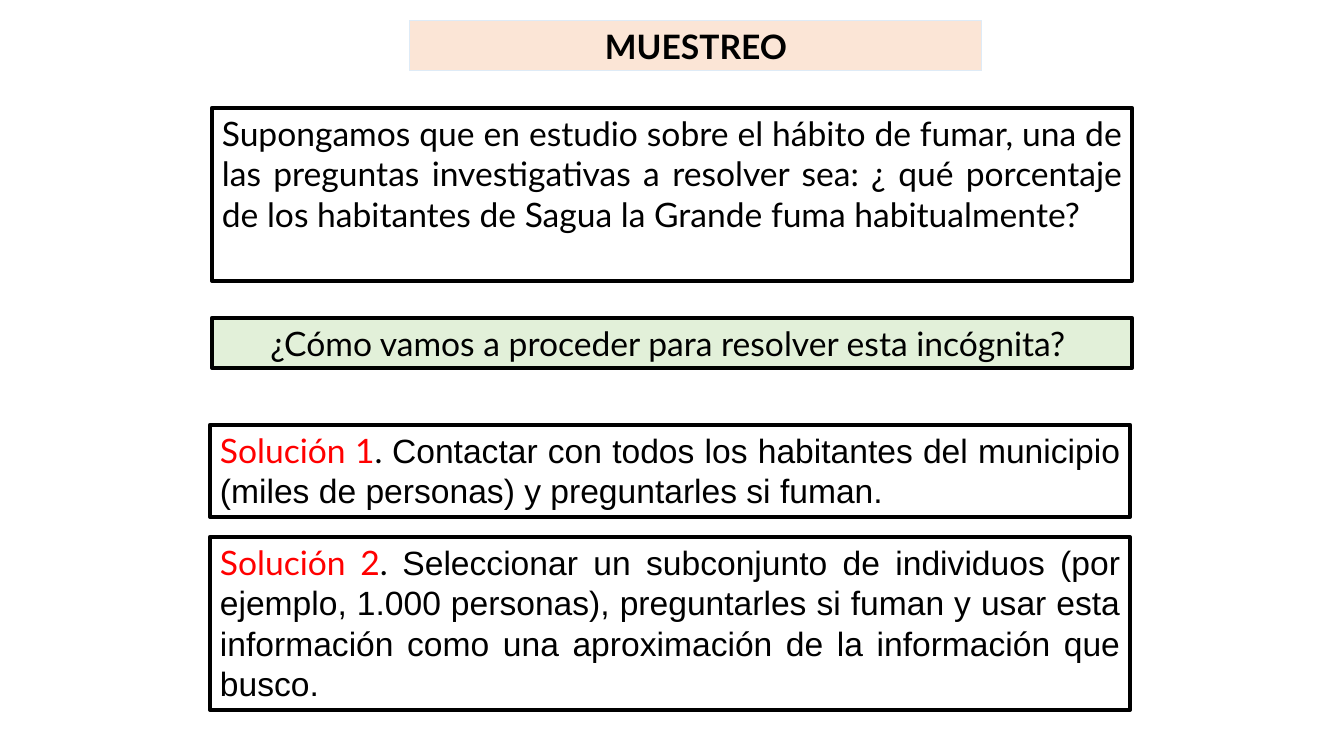
from pptx import Presentation
from pptx.dml.color import RGBColor
from pptx.enum.shapes import MSO_SHAPE
from pptx.enum.text import MSO_ANCHOR, PP_ALIGN
from pptx.util import Emu, Pt

COLORS = {
    "black": "000000",
    "red": "FF0000",
    "peach": "FBE5D6",
    "green": "E2F0D9",
    "pale_blue": "DEEBF7",
}
EMU_PER_PX = 914400 / 100.8


def px(length):
    return Emu(round(length * EMU_PER_PX))


def color(name):
    return RGBColor.from_string(COLORS[name])


presentation = Presentation()
presentation.slide_width = px(1344)
presentation.slide_height = px(756)
slide = presentation.slides.add_slide(presentation.slide_layouts[6])


def add_box(runs, left, top, width, height, fill=None, line="black",
            line_width=3, align=PP_ALIGN.JUSTIFY, bold=False):
    box = slide.shapes.add_shape(
        MSO_SHAPE.RECTANGLE, px(left), px(top), px(width), px(height))
    box.shadow.inherit = False
    if fill:
        box.fill.solid()
        box.fill.fore_color.rgb = color(fill)
    else:
        box.fill.background()
    box.line.color.rgb = color(line)
    box.line.width = Pt(line_width)
    frame = box.text_frame
    frame.word_wrap = True
    frame.vertical_anchor = MSO_ANCHOR.TOP
    paragraph = frame.paragraphs[0]
    paragraph.alignment = align
    for text, font_name, font_color in runs:
        run = paragraph.add_run()
        run.text = text
        run.font.name = font_name
        run.font.size = Pt(24)
        run.font.bold = bold
        run.font.color.rgb = color(font_color)


add_box([("Supongamos que en estudio sobre el hábito de fumar, una de las "
          "preguntas investigativas a resolver sea: ¿ qué porcentaje de los "
          "habitantes de Sagua la Grande fuma habitualmente?", "Lato", "black")],
        212, 108, 920, 173)
add_box([("MUESTREO", "Lato", "black")], 410, 21, 572, 50,
        fill="peach", line="pale_blue", line_width=0.75,
        align=PP_ALIGN.CENTER, bold=True)
add_box([("¿Cómo vamos a proceder para resolver esta incógnita? ", "Lato", "black")],
        212, 318, 920, 50, fill="green", align=PP_ALIGN.CENTER)

solutions = [
    (425, 92, "Contactar con todos los habitantes del municipio (miles de "
              "personas) y preguntarles si fuman."),
    (537, 173, "Seleccionar un subconjunto de individuos (por ejemplo, 1.000 "
               "personas), preguntarles si fuman y usar esta información como "
               "una aproximación de la información que busco."),
]
for number, (top, height, proposal) in enumerate(solutions, start=1):
    add_box([(f"Solución {number}", "Lato", "red"),
             (". ", "Lato", "black"),
             (proposal, "Arial", "black")],
            210, top, 920, height)

presentation.save("out.pptx")
